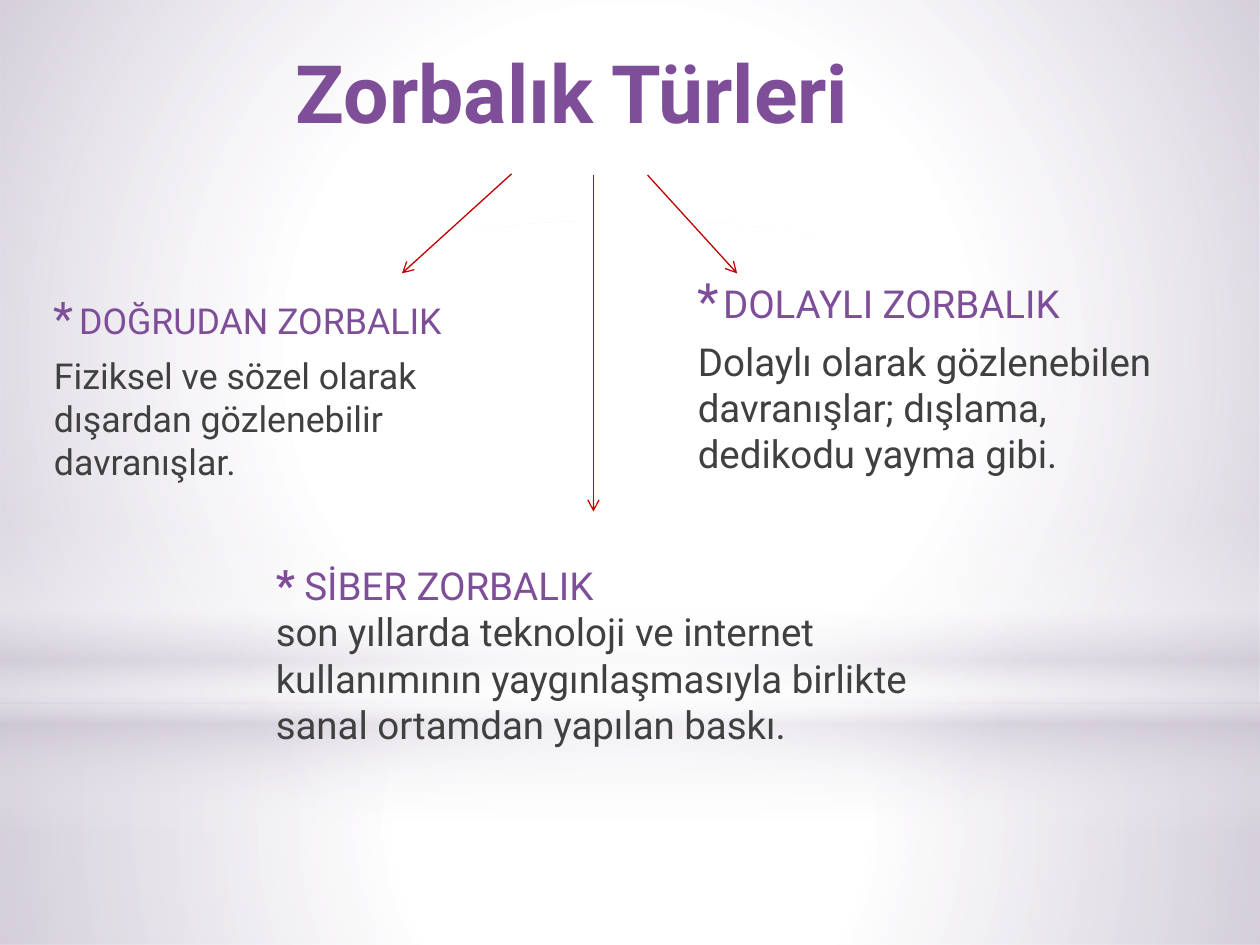
from dataclasses import dataclass

from lxml import etree
from pptx import Presentation
from pptx.dml.color import RGBColor
from pptx.enum.shapes import MSO_CONNECTOR, MSO_SHAPE
from pptx.enum.text import MSO_ANCHOR, PP_ALIGN
from pptx.oxml.ns import qn
from pptx.slide import Slide
from pptx.text.text import TextFrame
from pptx.util import Inches, Pt

RECTANGLE, OVAL = MSO_SHAPE.RECTANGLE, MSO_SHAPE.OVAL
STRAIGHT = MSO_CONNECTOR.STRAIGHT
TOP, CENTER = MSO_ANCHOR.TOP, PP_ALIGN.CENTER
FONT = "Roboto"
COLORS = {
    "white": "FFFFFF",
    "haze": "C9C2D1",
    "purple": "7E4E99",
    "body": "404040",
    "arrow": "C00000",
}


@dataclass(frozen=True)
class Stop:
    position: int
    color: str
    opacity: int


@dataclass(frozen=True)
class Glow:
    shape_type: MSO_SHAPE
    top: float
    height: float
    stops: tuple[Stop, ...]
    radial: bool = True


@dataclass(frozen=True)
class Arrow:
    start: tuple[float, float]
    end: tuple[float, float]


@dataclass(frozen=True)
class Box:
    left: float
    top: float
    width: float
    height: float


@dataclass(frozen=True)
class Topic:
    box: Box
    size: float
    heading: str
    description: str


GLOWS = (
    Glow(RECTANGLE, 5.58, 1.92,
         (Stop(0, "white", 91), Stop(37, "white", 76), Stop(100, "haze", 79))),
    Glow(RECTANGLE, 0, 5.58,
         (Stop(0, "white", 89), Stop(48, "white", 62), Stop(100, "haze", 79))),
    Glow(RECTANGLE, 4.12, 2.5,
         (Stop(0, "white", 0), Stop(29, "white", 30), Stop(45, "haze", 40),
          Stop(55, "white", 26), Stop(65, "haze", 60), Stop(100, "white", 0)),
         radial=False),
    Glow(OVAL, 1.75, 5.58, (Stop(0, "white", 100), Stop(56, "white", 0))),
)
ARROWS = (
    Arrow((5.14, 1.39), (5.85, 2.17)),
    Arrow((4.71, 1.39), (4.71, 4.06)),
    Arrow((4.06, 1.38), (3.19, 2.17)),
)
TITLE_BOX = Box(0.98, 0.29, 7.12, 1.25)
TOPICS = (
    Topic(Box(0.28, 2.32, 4.09, 1.51), 20.4, "DOĞRUDAN ZORBALIK",
          "Fiziksel ve sözel olarak dışardan gözlenebilir davranışlar."),
    Topic(Box(5.39, 2.17, 4.09, 1.66), 22, "DOLAYLI ZORBALIK",
          "Dolaylı olarak gözlenebilen davranışlar; dışlama, dedikodu yayma gibi."),
)
CYBER = Topic(
    Box(2.09, 4.38, 5.51, 1.62), 22, " SİBER ZORBALIK",
    "son yıllarda teknoloji ve internet kullanımının yaygınlaşmasıyla "
    "birlikte sanal ortamdan yapılan baskı.")


def rgb(name: str) -> RGBColor:
    return RGBColor.from_string(COLORS[name])


def add_element(parent, tag: str, **attributes):
    values = {key: str(value) for key, value in attributes.items()}
    return etree.SubElement(parent, qn(tag), values)


def draw_glow(slide: Slide, glow: Glow) -> None:
    shape = slide.shapes.add_shape(
        glow.shape_type, 0, Inches(glow.top), Inches(10), Inches(glow.height))
    shape.shadow.inherit = False
    shape.line.fill.background()
    shape.fill.gradient()
    gradient = shape.element.spPr.find(qn("a:gradFill"))
    for child in list(gradient):
        gradient.remove(child)
    stops = add_element(gradient, "a:gsLst")
    for stop in glow.stops:
        entry = add_element(stops, "a:gs", pos=stop.position * 1000)
        color = add_element(entry, "a:srgbClr", val=COLORS[stop.color])
        add_element(color, "a:alpha", val=stop.opacity * 1000)
    if glow.radial:
        circle = add_element(gradient, "a:path", path="circle")
        add_element(circle, "a:fillToRect", l=50000, t=50000, r=50000, b=50000)
    else:
        add_element(gradient, "a:lin", ang=90 * 60000, scaled=0)


def draw_arrow(slide: Slide, arrow: Arrow) -> None:
    start = [Inches(value) for value in arrow.start]
    end = [Inches(value) for value in arrow.end]
    connector = slide.shapes.add_connector(STRAIGHT, *start, *end)
    connector.line.color.rgb = rgb("arrow")
    connector.line.width = Pt(0.75)
    add_element(connector.line._get_or_add_ln(), "a:tailEnd", type="arrow")
    add_element(connector.element.spPr, "a:effectLst")


def add_text_box(slide: Slide, box: Box) -> TextFrame:
    shape = slide.shapes.add_textbox(
        Inches(box.left), Inches(box.top), Inches(box.width), Inches(box.height))
    shape.text_frame.word_wrap = True
    shape.text_frame.vertical_anchor = TOP
    return shape.text_frame


def set_font(font, size: float, color: str, bold: bool = False) -> None:
    font.name = FONT
    font.size = Pt(size)
    font.bold = bold
    font.color.rgb = rgb(color)


def set_indent(paragraph, left: float, first: float):
    properties = paragraph._p.get_or_add_pPr()
    properties.set("marL", str(Inches(left)))
    properties.set("indent", str(Inches(first)))
    return properties


def draw_title(slide: Slide) -> None:
    paragraph = add_text_box(slide, TITLE_BOX).paragraphs[0]
    paragraph.text = "Zorbalık Türleri"
    paragraph.alignment = CENTER
    set_font(paragraph.font, 46, "purple", bold=True)


def add_description(frame: TextFrame, topic: Topic):
    paragraph = frame.add_paragraph()
    paragraph.text = topic.description
    set_font(paragraph.font, topic.size, "body")
    return paragraph


def draw_topic(slide: Slide, topic: Topic) -> None:
    frame = add_text_box(slide, topic.box)
    heading = frame.paragraphs[0]
    heading.text = topic.heading
    properties = set_indent(heading, 0.25, -0.2)
    bullet_color = add_element(properties, "a:buClr")
    add_element(bullet_color, "a:srgbClr", val=COLORS["purple"])
    add_element(properties, "a:buSzPct", val=130000)
    add_element(properties, "a:buFont", typeface=FONT)
    add_element(properties, "a:buChar", char="*")
    heading.space_after = Pt(3)
    set_font(heading.font, topic.size, "purple")
    description = add_description(frame, topic)
    set_indent(description, 0.05, 0)
    description.space_before = Pt(4)
    description.space_after = Pt(3)


def draw_cyber(slide: Slide, topic: Topic) -> None:
    frame = add_text_box(slide, topic.box)
    heading = frame.paragraphs[0]
    for text, size, bold in (("*", 24, True), (topic.heading, topic.size, False)):
        run = heading.add_run()
        run.text = text
        set_font(run.font, size, "purple", bold)
    add_description(frame, topic)


def main() -> None:
    presentation = Presentation()
    presentation.slide_width, presentation.slide_height = Inches(10), Inches(7.5)
    slide = presentation.slides.add_slide(presentation.slide_layouts[6])
    slide.background.fill.solid()
    slide.background.fill.fore_color.rgb = rgb("white")
    for glow in GLOWS:
        draw_glow(slide, glow)
    draw_title(slide)
    for topic in TOPICS:
        draw_topic(slide, topic)
    draw_cyber(slide, CYBER)
    for arrow in ARROWS:
        draw_arrow(slide, arrow)
    presentation.save("out.pptx")


if __name__ == "__main__":
    main()
